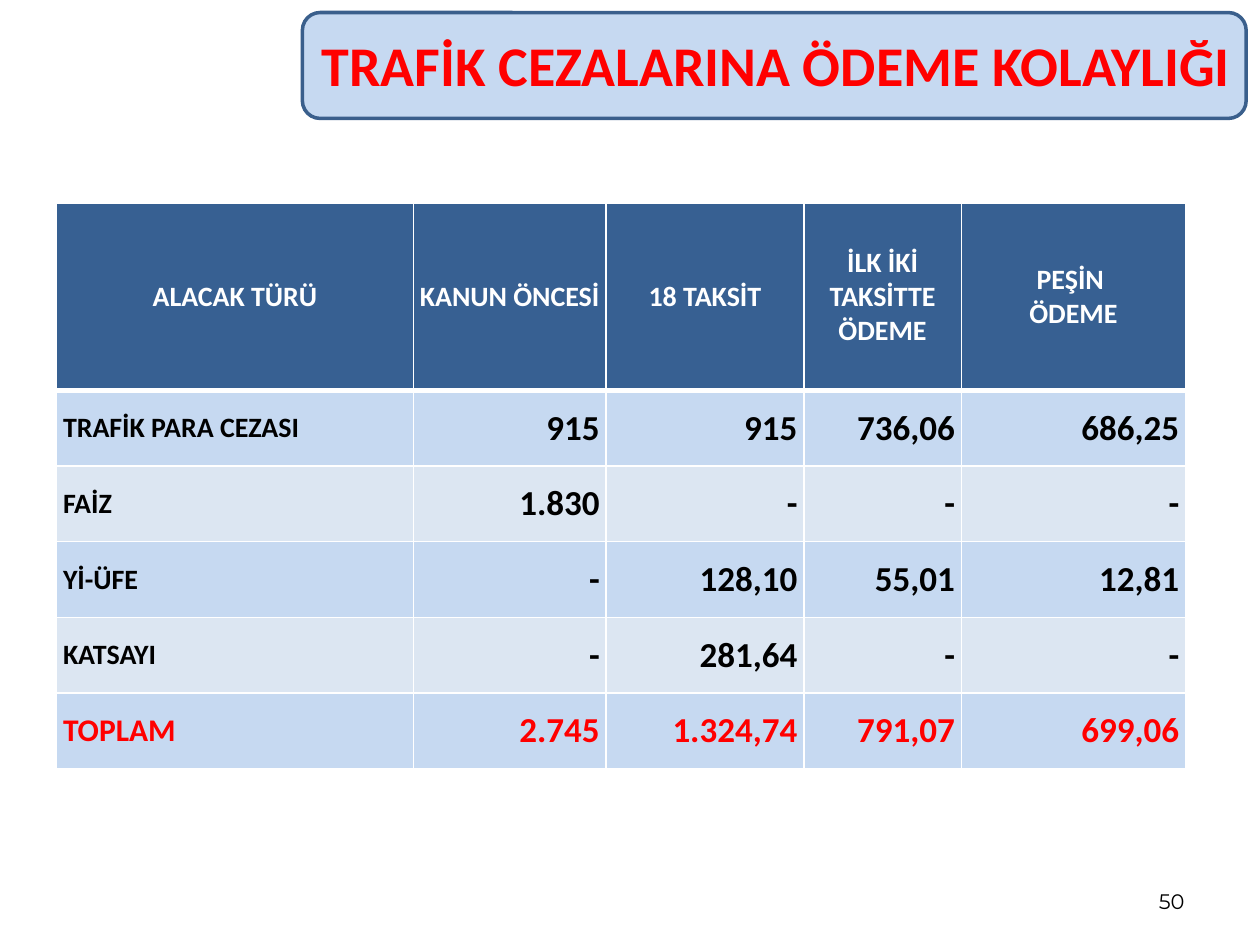
from pptx import Presentation
from pptx.dml.color import RGBColor
from pptx.enum.shapes import MSO_SHAPE
from pptx.enum.text import MSO_ANCHOR, PP_ALIGN
from pptx.oxml import parse_xml
from pptx.oxml.ns import nsdecls
from pptx.util import Inches, Pt

NAVY, BLUE, PALE = "376092", "C6D9F1", "DCE6F2"
WHITE, BLACK, RED = "FFFFFF", "000000", "FF0000"

COLUMN_WIDTHS = [2.83, 1.53, 1.57, 1.25, 1.78]
HEADER_HEIGHT, ROW_HEIGHT = 1.49, 0.6
ROWS = [
    ["ALACAK TÜRÜ", "KANUN ÖNCESİ", "18 TAKSİT", "İLK İKİ TAKSİTTE ÖDEME", "PEŞİN \nÖDEME"],
    ["TRAFİK PARA CEZASI", "915", "915", "736,06", "686,25"],
    ["FAİZ", "1.830", "-", "-", "-"],
    ["Yİ-ÜFE", "-", "128,10", "55,01", "12,81"],
    ["KATSAYI", "-", "281,64", "-", "-"],
    ["TOPLAM", "2.745", "1.324,74", "791,07", "699,06"],
]


def rgb(value):
    return RGBColor.from_string(value)


class Deck:
    def __init__(self, width, height):
        self.prs = Presentation()
        self.prs.slide_width, self.prs.slide_height = Inches(width), Inches(height)
        self.s = self.prs.slides.add_slide(self.prs.slide_layouts[5])

    def set_text(self, tf, text, color, align=PP_ALIGN.LEFT, **font):
        tf.text = text
        for p in tf.paragraphs:
            p.alignment = align
            for r in p.runs:
                r.font.color.rgb = rgb(color)
                for name, value in {"name": "Calibri", "bold": True, **font}.items():
                    setattr(r.font, name, value)

    def banner(self, x, y, w, h):
        sp = self.s.shapes.add_shape(MSO_SHAPE.ROUNDED_RECTANGLE,
                                     Inches(x), Inches(y), Inches(w), Inches(h))
        sp.shadow.inherit = False
        sp.fill.solid()
        sp.fill.fore_color.rgb = rgb(BLUE)
        sp.line.color.rgb = rgb("3A5F8C")
        sp.line.width = Pt(2)
        self.s.shapes.title._element.addprevious(sp._element)

    def title(self, x, y, w, h, text):
        sp = self.s.shapes.title
        box = {"left": x, "top": y, "width": w, "height": h}
        for name, value in box.items():
            setattr(sp, name, Inches(value))
        sp.text_frame.vertical_anchor = MSO_ANCHOR.MIDDLE
        self.set_text(sp.text_frame, text, RED, PP_ALIGN.CENTER, size=Pt(32))

    def page_number(self, x, y, w, h, text):
        tf = self.s.shapes.add_textbox(Inches(x), Inches(y), Inches(w), Inches(h)).text_frame
        tf.word_wrap = True
        tf.vertical_anchor = MSO_ANCHOR.MIDDLE
        self.set_text(tf, text, BLACK, PP_ALIGN.RIGHT, size=Pt(12), name="Montserrat", bold=False)

    def borders(self, cell, **widths):
        """Draw white cell borders; widths in points keyed by L, R, T, B in that order."""
        tc_pr = cell._tc.get_or_add_tcPr()
        for i, (side, width) in enumerate(widths.items()):
            tc_pr.insert(i, parse_xml(
                f'<a:ln{side} {nsdecls("a")} w="{Pt(width)}"><a:solidFill>'
                f'<a:srgbClr val="{WHITE}"/></a:solidFill></a:ln{side}>'))

    def cell(self, cell, text, row, col):
        margins = {"margin_left": 0.05, "margin_right": 0.05,
                   "margin_top": 0.04, "margin_bottom": 0.04}
        for name, value in margins.items():
            setattr(cell, name, Inches(value))
        cell.vertical_anchor = MSO_ANCHOR.MIDDLE
        header, total = row == 0, row == len(ROWS) - 1
        cell.fill.solid()
        cell.fill.fore_color.rgb = rgb(NAVY if header else BLUE if row % 2 else PALE)
        self.borders(cell, L=1, R=1, T=3 if row == 1 else 1, B=3 if header else 1)
        if header:
            color, align, size = WHITE, PP_ALIGN.CENTER, 16
        else:
            color = RED if total else BLACK
            align = PP_ALIGN.RIGHT if col else PP_ALIGN.LEFT
            size = 20 if col else 18 if total else 16
        self.set_text(cell.text_frame, text, color, align, size=Pt(size))

    def table(self, x, y, rows, widths):
        heights = [HEADER_HEIGHT] + [ROW_HEIGHT] * (len(rows) - 1)
        table = self.s.shapes.add_table(len(rows), len(widths), Inches(x), Inches(y),
                                        Inches(sum(widths)), Inches(sum(heights))).table
        for column, width in zip(table.columns, widths):
            column.width = Inches(width)
        for i, (height, texts) in enumerate(zip(heights, rows)):
            table.rows[i].height = Inches(height)
            for j, text in enumerate(texts):
                self.cell(table.cell(i, j), text, i, j)


def main():
    deck = Deck(10, 7.5)
    deck.banner(2.4, 0.1, 7.49, 0.84)
    deck.title(2.3, -0.16, 7.72, 1.34, "TRAFİK CEZALARINA ÖDEME KOLAYLIĞI")
    deck.page_number(7.17, 6.95, 2.33, 0.4, "50")
    deck.table(0.45, 1.61, ROWS, COLUMN_WIDTHS)
    deck.prs.save("out.pptx")


if __name__ == "__main__":
    main()
